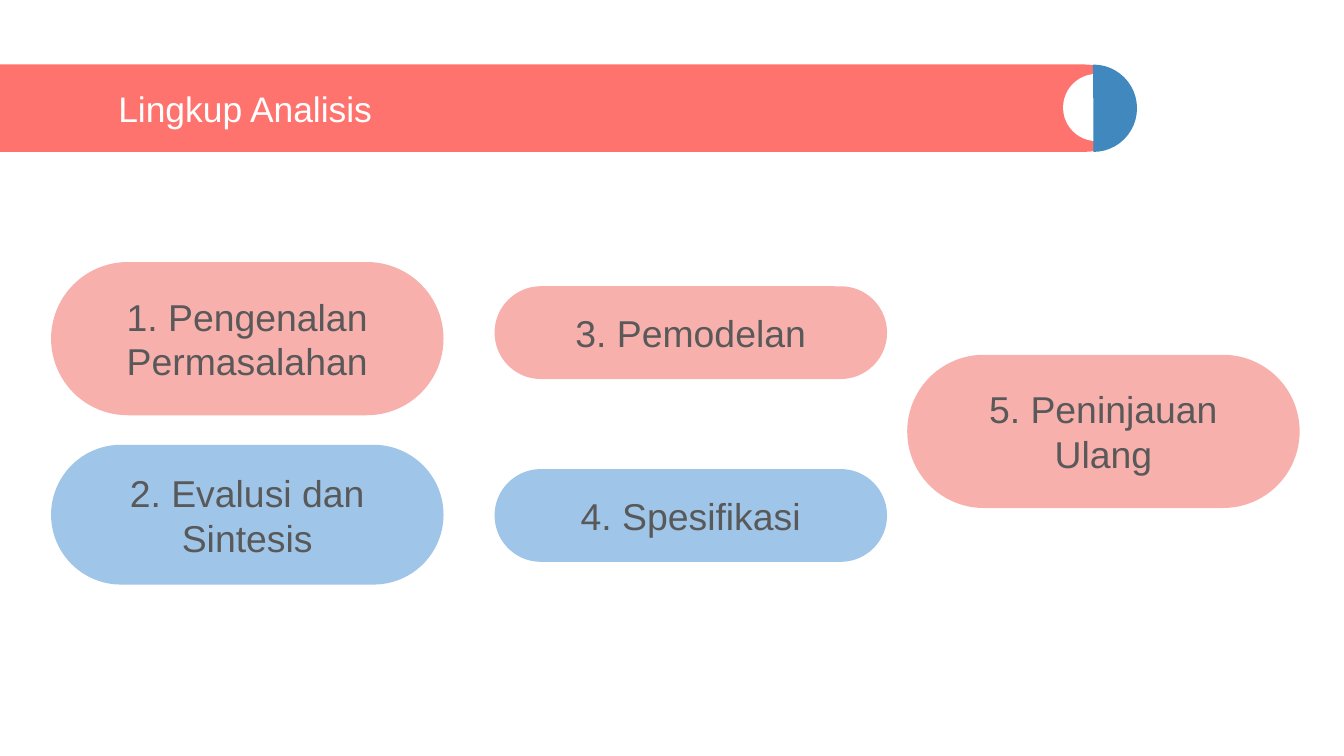
import pptx
import pptx.dml.color
import pptx.enum.shapes
import pptx.enum.text
import pptx.util

COLORS = {
    "banner": "FF736E",
    "accent": "4088BE",
    "white": "FFFFFF",
    "pink": "F8B0AD",
    "sky": "9FC5E8",
    "text": "595959",
}
SHAPES = pptx.enum.shapes.MSO_SHAPE
ALIGN = pptx.enum.text.PP_ALIGN
SLIDE_WIDTH = 10
SLIDE_HEIGHT = SLIDE_WIDTH * 9 / 16
COLUMNS = [0.38, 3.68, 6.75]
PILL_WIDTH = 2.92
STEPS = [
    ("1. Pengenalan Permasalahan", 0, 1.95, 1.14, "pink"),
    ("2. Evalusi dan Sintesis", 0, 3.31, 1.04, "sky"),
    ("3. Pemodelan", 1, 2.13, 0.69, "pink"),
    ("4. Spesifikasi", 1, 3.49, 0.69, "sky"),
    ("5. Peninjauan Ulang", 2, 2.64, 1.14, "pink"),
]


def rgb(name):
    return pptx.dml.color.RGBColor.from_string(COLORS[name])


def write_text(shape, text, size, color, align):
    frame = shape.text_frame
    frame.word_wrap = True
    frame.auto_size = pptx.enum.text.MSO_AUTO_SIZE.NONE
    frame.vertical_anchor = pptx.enum.text.MSO_ANCHOR.MIDDLE
    margin = pptx.util.Inches(0.1)
    frame.margin_left = frame.margin_right = margin
    frame.margin_top = frame.margin_bottom = margin
    paragraph = frame.paragraphs[0]
    paragraph.alignment = align
    run = paragraph.add_run()
    run.text = text
    run.font.name = "Arial"
    run.font.size = pptx.util.Pt(size)
    run.font.color.rgb = rgb(color)


def add_filled_shape(slide, kind, box, color, adjustments=(), rotation=0):
    shape = slide.shapes.add_shape(kind, *map(pptx.util.Inches, box))
    for index, value in enumerate(adjustments):
        shape.adjustments[index] = value
    shape.rotation = rotation
    shape.shadow.inherit = False
    shape.fill.solid()
    shape.fill.fore_color.rgb = rgb(color)
    shape.line.fill.background()
    return shape


def add_pill(slide, box, color):
    return add_filled_shape(slide, SHAPES.ROUNDED_RECTANGLE, box, color, [0.5])


def add_banner(slide):
    add_pill(slide, (-0.32, 0.48, 8.72, 0.65), "banner")
    add_filled_shape(slide, SHAPES.OVAL, (7.91, 0.55, 0.5, 0.5), "white",
                     rotation=180)
    add_filled_shape(slide, SHAPES.PIE, (7.81, 0.48, 0.65, 0.65), "accent",
                     adjustments=[53.67, 162], rotation=180)


def place_title(slide, text):
    title = slide.shapes.title
    title.left, title.top, title.width, title.height = map(
        pptx.util.Inches, (0.78, 0.6, 6.97, 0.41))
    write_text(title, text, size=19, color="white", align=ALIGN.LEFT)
    title.element.getparent().append(title.element)


def add_step(slide, text, column, top, height, color):
    pill = add_pill(slide, (COLUMNS[column], top, PILL_WIDTH, height), color)
    write_text(pill, text, size=20, color="text", align=ALIGN.CENTER)


def main():
    presentation = pptx.Presentation()
    presentation.slide_width = pptx.util.Inches(SLIDE_WIDTH)
    presentation.slide_height = pptx.util.Inches(SLIDE_HEIGHT)
    slide = presentation.slides.add_slide(presentation.slide_layouts[5])
    add_banner(slide)
    place_title(slide, "Lingkup Analisis")
    for step in STEPS:
        add_step(slide, *step)
    presentation.save("out.pptx")


if __name__ == "__main__":
    main()
